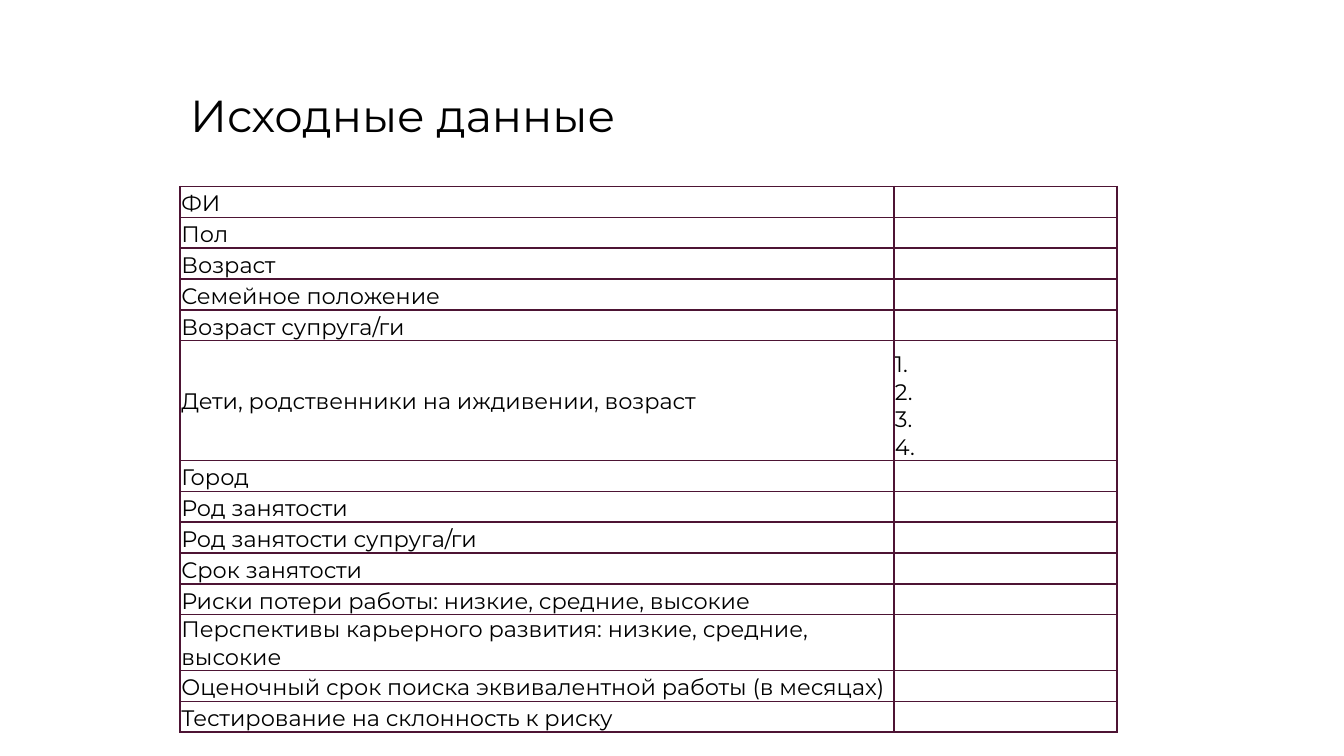
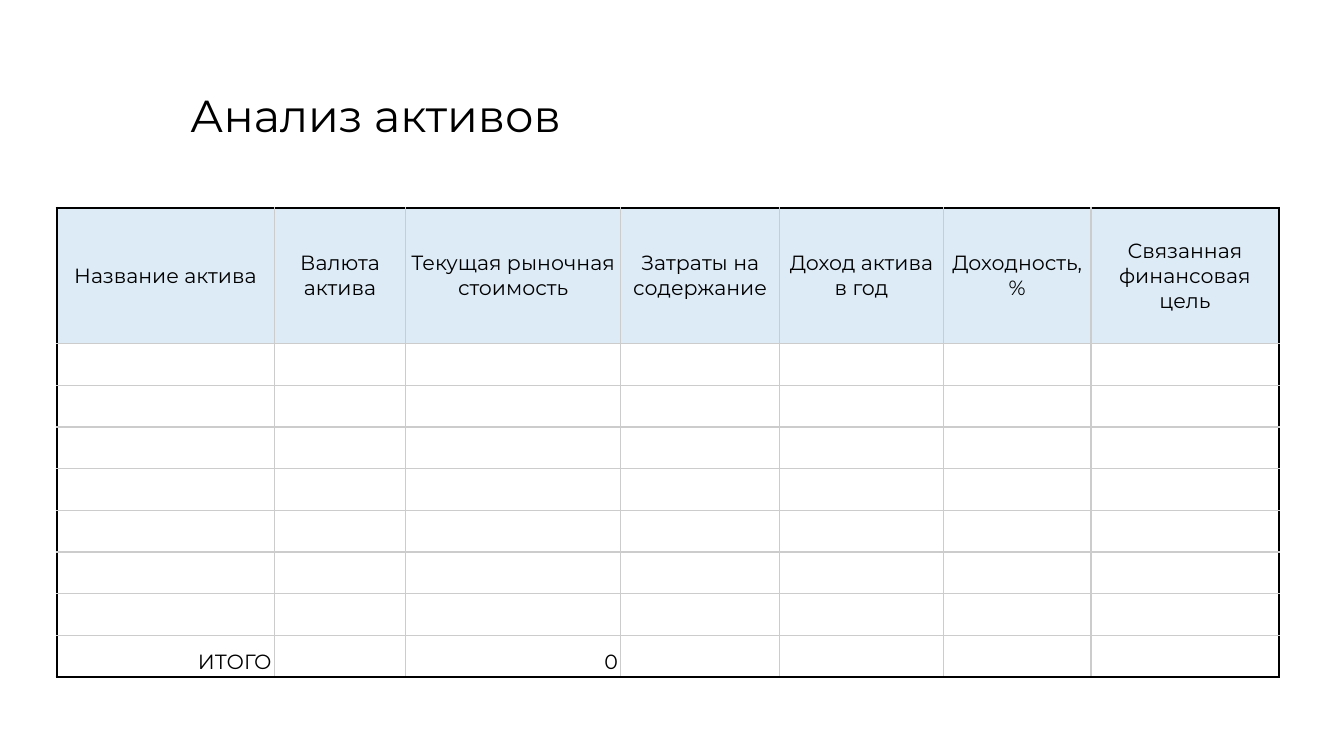
from lxml.etree import SubElement
from pptx import Presentation
from pptx.dml.color import RGBColor
from pptx.enum.text import MSO_ANCHOR, MSO_AUTO_SIZE, PP_ALIGN
from pptx.oxml.ns import qn
from pptx.util import Pt

BLACK = RGBColor(0x00, 0x00, 0x00)
PLUM = RGBColor(0x4D, 0x14, 0x34)
GREY = RGBColor(0xCC, 0xCC, 0xCC)
PALE_BLUE = RGBColor(0xDD, 0xEB, 0xF7)
FONT = "Montserrat"


class Deck:
    """Holds the shared style and the current slide."""

    def __init__(self):
        self.prs = Presentation()
        self.prs.slide_width, self.prs.slide_height = Pt(720), Pt(405)
        self.s = None

    def run(self, p, text, size):
        r = p.add_run()
        r.text = text
        r.font.name, r.font.size = FONT, Pt(size)
        r.font.color.rgb = BLACK

    def slide(self, title, width):
        self.s = self.prs.slides.add_slide(self.prs.slide_layouts[5])
        sp = self.s.shapes.title
        sp.left, sp.top, sp.width, sp.height = Pt(96.5), Pt(41), Pt(width), Pt(44.6)
        tf = sp.text_frame
        tf.word_wrap, tf.auto_size = True, MSO_AUTO_SIZE.NONE
        tf.vertical_anchor = MSO_ANCHOR.MIDDLE
        tf.margin_left = tf.margin_right = Pt(5.4)
        tf.margin_top = tf.margin_bottom = Pt(2.7)
        p = tf.paragraphs[0]
        p.alignment, p.line_spacing = PP_ALIGN.LEFT, 0.9
        self.run(p, title, 24)

    def table(self, left, top, cols, rows):
        frame = self.s.shapes.add_table(len(rows), len(cols), Pt(left), Pt(top),
                                        Pt(sum(cols)), Pt(sum(rows)))
        tbl = frame.table
        tbl.first_row = tbl.horz_banding = False
        for col, width in zip(tbl.columns, cols):
            col.width = Pt(width)
        for row, height in zip(tbl.rows, rows):
            row.height = Pt(height)
        return tbl

    def cell(self, cell, paragraphs, size, margins, borders, align=PP_ALIGN.LEFT,
             anchor=MSO_ANCHOR.BOTTOM, fill=None):
        """Paragraphs are lists of lines; borders map a side to (colour, width)."""
        (cell.margin_left, cell.margin_top,
         cell.margin_right, cell.margin_bottom) = map(Pt, margins)
        cell.vertical_anchor = anchor
        tf = cell.text_frame
        for i, lines in enumerate(paragraphs):
            p = tf.paragraphs[0] if i == 0 else tf.add_paragraph()
            p.alignment = align
            for j, line in enumerate(lines):
                if j:
                    p.add_line_break()
                self.run(p, line, size)
        if not paragraphs:
            # An empty cell keeps the small text height
            end = SubElement(tf.paragraphs[0]._p, qn("a:endParaRPr"))
            end.set("sz", str(size * 100))
            SubElement(end, qn("a:latin")).set("typeface", FONT)
        tcPr = cell._tc.get_or_add_tcPr()
        for side in "LRTB":
            colour, width = borders[side]
            ln = SubElement(tcPr, qn("a:ln" + side), w=str(Pt(width)))
            solid = SubElement(ln, qn("a:solidFill"))
            SubElement(solid, qn("a:srgbClr"), val=str(colour))
        if fill is None:
            cell.fill.background()
        else:
            cell.fill.solid()
            cell.fill.fore_color.rgb = fill


def source_data(deck):
    deck.slide("Исходные данные", 309.6)
    children = "Дети, родственники на иждивении, возраст"
    labels = [
        "ФИ", "Пол", "Возраст", "Семейное положение", "Возраст супруга/ги",
        children, "Город", "Род занятости", "Род занятости супруга/ги",
        "Срок занятости", "Риски потери работы: низкие, средние, высокие",
        "Перспективы карьерного развития: низкие, средние, высокие",
        "Оценочный срок поиска эквивалентной работы (в месяцах)",
        "Тестирование на склонность к риску",
    ]
    heights = [64.3 if label == children else 16.5 for label in labels]
    tbl = deck.table(96.5, 100, [382.3, 119.5], heights)
    borders = dict.fromkeys("LRTB", (PLUM, 1))
    margins = (0.7, 0.7, 0.7, 0)
    for i, label in enumerate(labels):
        tall = label == children
        deck.cell(tbl.cell(i, 0), [[label]], 12, margins, borders,
                  anchor=MSO_ANCHOR.MIDDLE if tall else MSO_ANCHOR.BOTTOM)
        deck.cell(tbl.cell(i, 1), [["1.", "2.", "3.", "4."]] if tall else [],
                  12, margins, borders)


def asset_analysis(deck):
    deck.slide("Анализ активов", 484.6)
    headers = [
        ["Название актива"], ["Валюта актива"], ["Текущая рыночная стоимость"],
        ["Затраты на содержание"], ["Доход актива", "в год"],
        ["Доходность, %"], ["Связанная финансовая", "цель"],
    ]
    totals = {0: "ИТОГО", 2: "0"}
    cols = [116.6, 70.4, 115.2, 85.1, 87.8, 79, 100.8]
    rows = [72.6] + [22.35] * 8
    tbl = deck.table(30.4, 111.5, cols, rows)
    last_row, last_col = len(rows) - 1, len(cols) - 1
    outer, inner = (BLACK, 1.5), (GREY, 0.75)
    for i in range(len(rows)):
        for j in range(len(cols)):
            # Black frame outside, grey grid inside
            borders = {"L": outer if j == 0 else inner,
                       "R": outer if j == last_col else inner,
                       "T": outer if i == 0 else inner,
                       "B": outer if i == last_row else inner}
            style, paragraphs = {}, []
            if i == 0:
                paragraphs = [[text] for text in headers[j]]
                style = dict(align=PP_ALIGN.CENTER, anchor=MSO_ANCHOR.MIDDLE,
                             fill=PALE_BLUE)
            elif i == last_row and j in totals:
                paragraphs = [[totals[j]]]
                style = dict(align=PP_ALIGN.RIGHT)
            deck.cell(tbl.cell(i, j), paragraphs, 11, [1.5] * 4, borders, **style)


def main():
    deck = Deck()
    source_data(deck)
    asset_analysis(deck)
    deck.prs.save("out.pptx")


if __name__ == "__main__":
    main()
